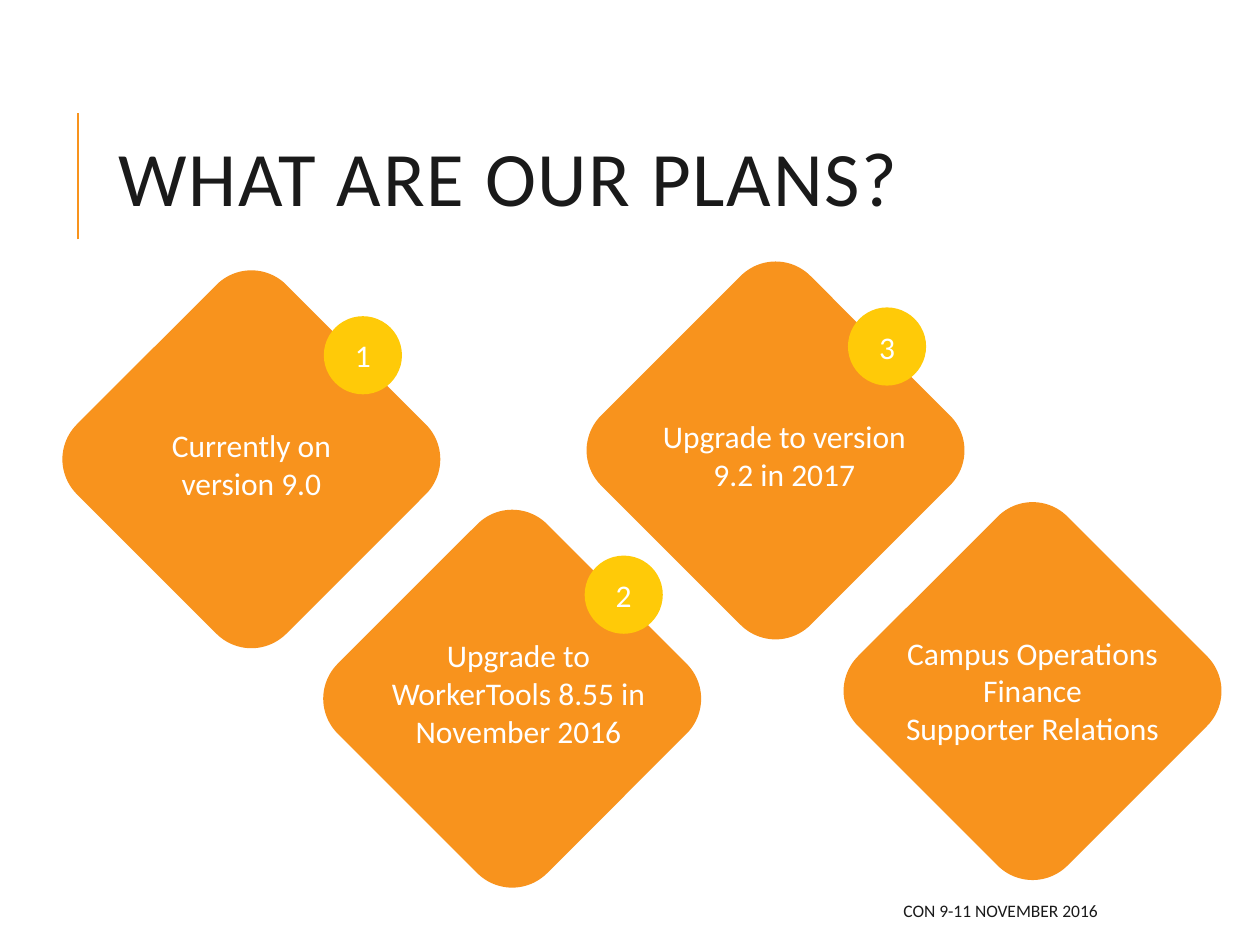
from dataclasses import dataclass
from typing import Optional

import lxml.etree
import pptx
import pptx.dml.color
import pptx.enum.shapes
import pptx.enum.text
import pptx.oxml.ns
import pptx.util
from pptx.util import Inches

ORANGE = pptx.dml.color.RGBColor(0xF8, 0x93, 0x1D)
YELLOW = pptx.dml.color.RGBColor(0xFF, 0xCA, 0x08)
WHITE = pptx.dml.color.RGBColor(0xFF, 0xFF, 0xFF)
INK = pptx.dml.color.RGBColor(0x1A, 0x1A, 0x1A)
FONT = "Calibri"
DIAMOND_SIZE = 2.35
BADGE_SIZE = 0.62
BADGE_OFFSET = (1.75, 0.04)

Shapes = pptx.enum.shapes.MSO_SHAPE
Align = pptx.enum.text.PP_ALIGN
Anchor = pptx.enum.text.MSO_ANCHOR


@dataclass(frozen=True)
class Plan:
    left: float
    top: float
    lines: tuple[str, ...]
    text_area: tuple[float, float, float, float]
    number: Optional[int] = None


PLANS = (
    Plan(0.82, 2.47, ("Currently on version 9.0",), (0.87, 3.33, 2.25, 0.71), 1),
    Plan(2.89, 4.37, ("Upgrade to WorkerTools 8.55 in November 2016",),
         (2.99, 5, 2.25, 1.01), 2),
    Plan(4.98, 2.4, ("Upgrade to version 9.2 in 2017",), (5.1, 3.26, 2.25, 0.71), 3),
    Plan(7.02, 4.31, ("Campus Operations", "Finance", "Supporter Relations"),
         (6.93, 4.98, 2.53, 1.01)),
)


def write_text(box, *lines: str, size: float = 18, color=WHITE, align=Align.CENTER,
               anchor=Anchor.TOP, line_spacing: float = 1.0, tracking: float = 0) -> None:
    frame = box.text_frame
    frame.word_wrap = True
    frame.auto_size = pptx.enum.text.MSO_AUTO_SIZE.NONE
    frame.vertical_anchor = anchor
    for index, line in enumerate(lines):
        para = frame.add_paragraph() if index else frame.paragraphs[0]
        para.alignment = align
        para.line_spacing = line_spacing
        span = para.add_run()
        span.text = line
        span.font.name = FONT
        span.font.size = pptx.util.Pt(size)
        span.font.color.rgb = color
        if tracking:
            span.font._element.set("spc", str(int(tracking * 100)))


def add_solid(page, kind, left: float, top: float, size: float, color):
    shape = page.shapes.add_shape(kind, Inches(left), Inches(top), Inches(size), Inches(size))
    shape.shadow.inherit = False
    shape.fill.solid()
    shape.fill.fore_color.rgb = color
    shape.line.fill.background()
    return shape


def add_textbox(page, area: tuple[float, float, float, float]):
    return page.shapes.add_textbox(*map(Inches, area))


def draw_plan(page, plan: Plan) -> None:
    diamond = add_solid(page, Shapes.ROUNDED_RECTANGLE, plan.left, plan.top,
                        DIAMOND_SIZE, ORANGE)
    diamond.rotation = 45
    if plan.number is not None:
        badge = add_solid(page, Shapes.OVAL, plan.left + BADGE_OFFSET[0],
                          plan.top + BADGE_OFFSET[1], BADGE_SIZE, YELLOW)
        write_text(badge, str(plan.number), anchor=Anchor.MIDDLE)
    write_text(add_textbox(page, plan.text_area), *plan.lines)


def draw_title(page, text: str) -> None:
    rule = page.shapes.add_connector(pptx.enum.shapes.MSO_CONNECTOR.STRAIGHT,
                                     Inches(0.62), Inches(1.9), Inches(0.62), Inches(0.9))
    rule.line.color.rgb = ORANGE
    rule.line.width = pptx.util.Pt(1.5)
    lxml.etree.SubElement(rule._element.spPr, pptx.oxml.ns.qn("a:effectLst"))
    title = page.shapes.title
    title.left, title.top, title.width, title.height = map(Inches, (0.84, 0.64, 7.97, 1.64))
    write_text(title, text, size=44, color=INK, align=Align.LEFT,
               anchor=Anchor.MIDDLE, line_spacing=0.8, tracking=1)


def main() -> None:
    deck = pptx.Presentation()
    deck.slide_width, deck.slide_height = Inches(10), Inches(7.5)
    page = deck.slides.add_slide(deck.slide_layouts.get_by_name("Title Only"))
    draw_title(page, "WHAT ARE OUR PLANS?")
    for plan in PLANS:
        draw_plan(page, plan)
    write_text(add_textbox(page, (3.97, 7.08, 4.84, 0.3)), "CON 9-11 NOVEMBER 2016",
               size=10, color=INK, align=Align.RIGHT, anchor=Anchor.MIDDLE)
    deck.save("out.pptx")


if __name__ == "__main__":
    main()
